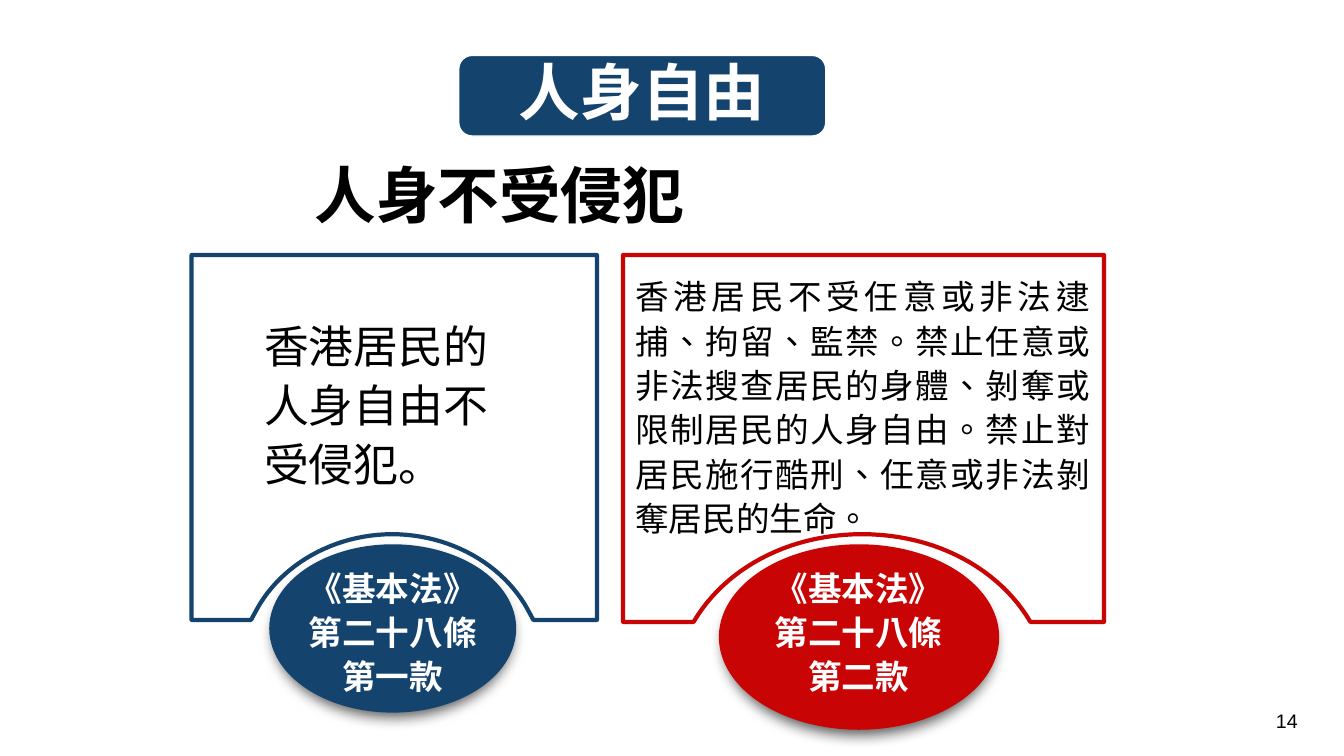
from lxml import etree
from pptx import Presentation
from pptx import util as u
from pptx.dml.color import RGBColor
from pptx.enum import lang, shapes, text
from pptx.oxml.ns import qn

COLOURS = {"navy": "14446E", "navy_edge": "0C2A42", "red": "C80404",
           "red_edge": "780202", "black": "000000", "white": "FFFFFF"}
BODY, NUMERAL = "Roboto", "Times New Roman"
HEADING = "人身自由"
TITLE = "人身不受侵犯"
PAGE_NUMBER = "14"

# box, disc: left, top, width, height; notch: x of the arc's two ends,
# y of its ends, control-point offset from the middle
PANELS = [
    dict(colour="navy", box=(1.9, 2.53, 4.02, 3.62), notch=(2.55, 5.23, 6.04, 0.58),
         feet=(2.49, 5.29), disc=(2.67, 5.4, 2.45, 1.67),
         words="香港居民的人身自由不受侵犯。", words_at=(2.62, 3.11, 2.58, 1.78),
         size=32, align=text.PP_ALIGN.LEFT,
         language=lang.MSO_LANGUAGE_ID.SIMPLIFIED_CHINESE,
         clause="第一款", clause_at=(3.02, 5.59, 1.75, 1.33)),
    dict(colour="red", box=(6.18, 2.53, 4.77, 3.64), notch=(6.88, 10.22, 6.17, 0.75),
         feet=(6.87, 10.22), disc=(7.13, 5.4, 2.78, 1.84),
         words="香港居民不受任意或非法逮捕、拘留、監禁。禁止任意或非法搜查居民的身體、"
               "剝奪或限制居民的人身自由。禁止對居民施行酷刑、任意或非法剝奪居民的生命。",
         words_at=(6.3, 2.7, 4.51, 3.01), size=24, align=text.PP_ALIGN.JUSTIFY,
         language=lang.MSO_LANGUAGE_ID.TRADITIONAL_CHINESE,
         clause="第二款", clause_at=(7.65, 5.59, 1.73, 1.33)),
]
ARC_TOP = 5.3
ARC_STEPS = 24

deck = Presentation()
deck.slide_width, deck.slide_height = u.Inches(13.33), u.Inches(7.5)
page = deck.slides.add_slide(deck.slide_layouts[6])


def rgb(name):
    return RGBColor.from_string(COLOURS[name])


def inches(lengths):
    return [u.Inches(length) for length in lengths]


def write(box, lines, size=24, colour="black", bold=False, align=text.PP_ALIGN.LEFT,
          spacing=1.0, insets=(0, 0, 0, 0), anchor=text.MSO_ANCHOR.TOP,
          language=lang.MSO_LANGUAGE_ID.TRADITIONAL_CHINESE):
    """Fill box with lines, each a list of (words, typeface) runs."""
    frame = box.text_frame
    frame.word_wrap = True
    frame.vertical_anchor = anchor
    (frame.margin_left, frame.margin_top,
     frame.margin_right, frame.margin_bottom) = inches(insets)
    for index, runs in enumerate(lines):
        para = frame.add_paragraph() if index else frame.paragraphs[0]
        para.alignment, para.line_spacing = align, spacing
        para._p.get_or_add_pPr().set("hangingPunct", "0")
        for words, typeface in runs:
            span = para.add_run()
            span.text = words
            font = span.font
            font.size, font.bold, font.name = u.Pt(size), bold, typeface
            font.color.rgb = rgb(colour)
            font.language_id = language
            latin = font._element.find(qn("a:latin"))
            latin.addnext(etree.Element(qn("a:ea"), typeface=BODY))


def text_box(at, lines, **style):
    write(page.shapes.add_textbox(*inches(at)), lines, **style)


def add_solid(kind, at, fill, edge=None, width=0):
    shape = page.shapes.add_shape(kind, *inches(at))
    shape.shadow.inherit = False
    shape.fill.solid()
    shape.fill.fore_color.rgb = rgb(fill)
    if edge:
        shape.line.color.rgb = rgb(edge)
        shape.line.width = u.Pt(width)
    else:
        shape.line.fill.background()
    return shape


def drop_shadow(shape):
    effects = shape._element.spPr.find(qn("a:effectLst"))
    shadow = etree.SubElement(effects, qn("a:outerShdw"), blurRad=str(u.Pt(10)),
                              dist=str(u.Pt(5)), dir="5400000", rotWithShape="0")
    tint = etree.SubElement(shadow, qn("a:srgbClr"), val=COLOURS["black"])
    etree.SubElement(tint, qn("a:alpha"), val="63000")


def bezier(start, first, second, end):
    """Points along a cubic curve, without its start."""
    for step in range(1, ARC_STEPS + 1):
        t = step / ARC_STEPS
        weights = ((1 - t) ** 3, 3 * t * (1 - t) ** 2, 3 * t * t * (1 - t), t ** 3)
        yield tuple(sum(w * p[axis] for w, p in zip(weights, (start, first, second, end)))
                    for axis in (0, 1))


def notched_frame(panel):
    left, top, width, height = panel["box"]
    right, bottom = left + width, top + height
    start, end, arc_y, reach = panel["notch"]
    foot_left, foot_right = panel["feet"]
    middle = (start + end) / 2
    inset = 0.09 * (end - start)
    shoulder = arc_y - 0.59 * (arc_y - ARC_TOP)
    crest = (middle, ARC_TOP)
    points = [(right, top), (right, bottom), (foot_right, bottom), (end, arc_y)]
    points += bezier((end, arc_y), (end - inset, shoulder),
                     (middle + reach, ARC_TOP), crest)
    points += bezier(crest, (middle - reach, ARC_TOP),
                     (start + inset, shoulder), (start, arc_y))
    points += [(foot_left, bottom), (left, bottom)]
    builder = page.shapes.build_freeform(u.Inches(left), u.Inches(top))
    builder.add_line_segments([inches(point) for point in points], close=True)
    outline = builder.convert_to_shape()
    outline.shadow.inherit = False
    outline.fill.background()
    outline.line.color.rgb = rgb(panel["colour"])
    outline.line.width = u.Pt(3)


text_box((3.02, 1.5, 6.89, 0.84), [[(TITLE, BODY)]], size=44, bold=True,
         insets=(0.1, 0.05, 0.1, 0.05), anchor=text.MSO_ANCHOR.MIDDLE)

for panel in PANELS:
    colour = panel["colour"]
    notched_frame(panel)
    text_box(panel["words_at"], [[(panel["words"], BODY)]], size=panel["size"],
             align=panel["align"], spacing=1.1, language=panel["language"])
    x, y, width, height = panel["disc"]
    disc = add_solid(shapes.MSO_SHAPE.OVAL,
                     (x + 0.06, y + 0.04, width - 0.12, height - 0.08),
                     colour, edge=colour + "_edge", width=2)
    drop_shadow(disc)
    ring = add_solid(shapes.MSO_SHAPE.DONUT, panel["disc"], colour)
    ring.adjustments[0] = 0.049
    article = [[("《基本法》", BODY)],
               [("第", BODY), ("二十八", NUMERAL), ("條", BODY)],
               [(panel["clause"], BODY)]]
    text_box(panel["clause_at"], article, colour="white", bold=True,
             align=text.PP_ALIGN.CENTER, spacing=1.1)

text_box((9.97, 6.98, 3, 0.4), [[(PAGE_NUMBER, "Arial")]], size=14,
         align=text.PP_ALIGN.RIGHT, insets=(0.1, 0.05, 0.1, 0.05))

banner = add_solid(shapes.MSO_SHAPE.ROUNDED_RECTANGLE, (4.55, 0.55, 3.64, 0.8),
                   "navy", edge="white", width=1)
write(banner, [[(HEADING, BODY)]], size=44, colour="white", bold=True,
      align=text.PP_ALIGN.CENTER, spacing=0.9, insets=(0.2, 0.03, 0.2, 0.03),
      anchor=text.MSO_ANCHOR.MIDDLE)

deck.save("out.pptx")
